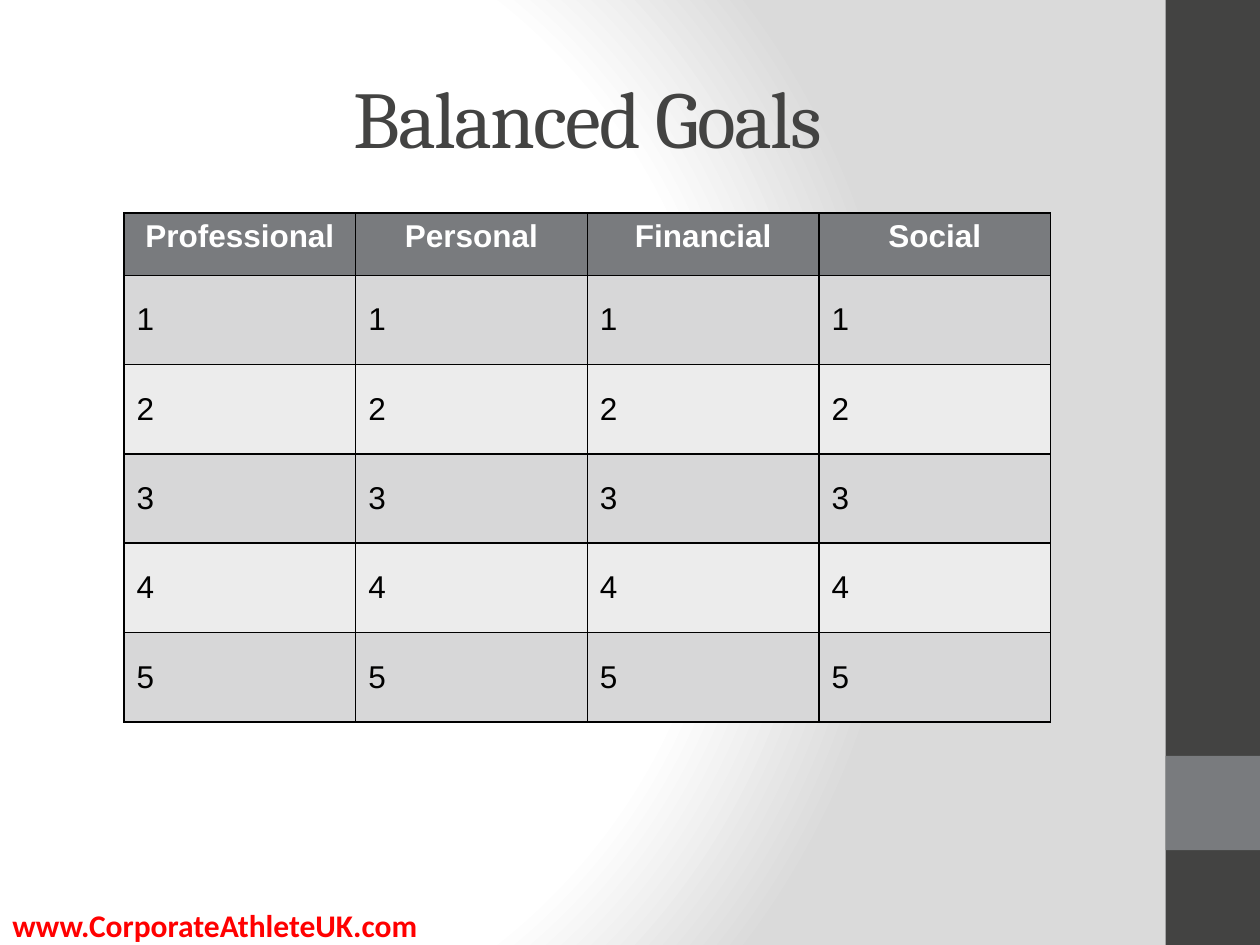
from lxml import etree
from pptx import Presentation
from pptx.dml.color import RGBColor as RGB
from pptx.enum.shapes import MSO_SHAPE as Shape
from pptx.enum.text import MSO_ANCHOR as Anchor, PP_ALIGN as Align
from pptx.oxml import parse_xml
from pptx.oxml.ns import nsdecls, qn
from pptx.util import Cm, Pt

DARK = RGB(0x43, 0x43, 0x42)
GREY = RGB(0x79, 0x7B, 0x7E)
BAND = RGB(0xD7, 0xD7, 0xD8)
PALE = RGB(0xEC, 0xEC, 0xEC)
RED = RGB(0xFF, 0, 0)
WHITE = RGB(0xFF, 0xFF, 0xFF)
BLACK = RGB(0, 0, 0)


def write(frame, text, size, name, color, bold=False, align=Align.LEFT):
    para = frame.paragraphs[0]
    para.text = text
    para.alignment = align
    font = para.font
    font.size, font.name, font.bold = Pt(size), name, bold
    font.color.rgb = color
    return para


def frame_cell(cell):
    """Put a thin black border on all four sides, ahead of the cell's fill."""
    props = cell._tc.get_or_add_tcPr()
    for i, side in enumerate(("lnL", "lnR", "lnT", "lnB")):
        props.insert(i, parse_xml(
            f'<a:{side} {nsdecls("a")} w="12700"><a:solidFill>'
            f'<a:srgbClr val="{BLACK}"/></a:solidFill></a:{side}>'))


deck = Presentation()
deck.slide_width, deck.slide_height = Cm(25.4), Cm(19.05)
slide = deck.slides.add_slide(deck.slide_layouts[6])
shapes = slide.shapes

# Background: white glow fading to grey on the right
slide.background.fill.gradient()
grad = next(slide.element.iter(qn("a:gradFill")))
for child in list(grad):
    grad.remove(child)
stops = etree.SubElement(grad, qn("a:gsLst"))
for pos, color in ((0, "FFFFFF"), (75, "FFFFFF"), (100, "DADADA")):
    stop = etree.SubElement(stops, qn("a:gs"), pos=str(pos * 1000))
    etree.SubElement(stop, qn("a:srgbClr"), val=color)
glow = etree.SubElement(grad, qn("a:path"), path="circle")
etree.SubElement(glow, qn("a:fillToRect"),
                 l="20000", t="50000", r="100000", b="50000")

# Side bar and its accent
for top, height, color in ((0, 19.05, DARK), (15.24, 1.9, GREY)):
    bar = shapes.add_shape(Shape.RECTANGLE, Cm(23.5), Cm(top), Cm(1.9), Cm(height))
    bar.shadow.inherit = False
    bar.fill.solid()
    bar.fill.fore_color.rgb = color
    bar.line.fill.background()

# Web address and title
site = shapes.add_textbox(Cm(0), Cm(18.14), Cm(11.3), Cm(1.02)).text_frame
site.word_wrap = True
write(site, "www.CorporateAthleteUK.com", 18, "Calibri", RED, bold=True)

title = shapes.add_textbox(Cm(1.27), Cm(0.76), Cm(21.16), Cm(3.18)).text_frame
title.word_wrap = True
title.vertical_anchor = Anchor.MIDDLE
para = write(title, "Balanced Goals", 46, "Cambria", DARK, align=Align.CENTER)
para.runs[0].font._element.set("spc", "-100")

# Goals table
heads = ("Professional", "Personal", "Financial", "Social")
goals = 5
table = shapes.add_table(goals + 1, len(heads), Cm(2.5), Cm(4.29),
                         Cm(18.67), Cm(10.24)).table
for col in table.columns:
    col.width = Cm(4.67)
for r, row in enumerate(table.rows):
    row.height = Cm(1.8 if r else 1.26)
    for head, cell in zip(heads, row.cells):
        cell.fill.solid()
        if r:
            cell.fill.fore_color.rgb = BAND if r % 2 else PALE
            cell.vertical_anchor = Anchor.MIDDLE
            write(cell.text_frame, str(r), 18, "Arial", BLACK)
        else:
            cell.fill.fore_color.rgb = GREY
            write(cell.text_frame, head, 18, "Arial", WHITE, True, Align.CENTER)
        frame_cell(cell)

deck.save("out.pptx")
